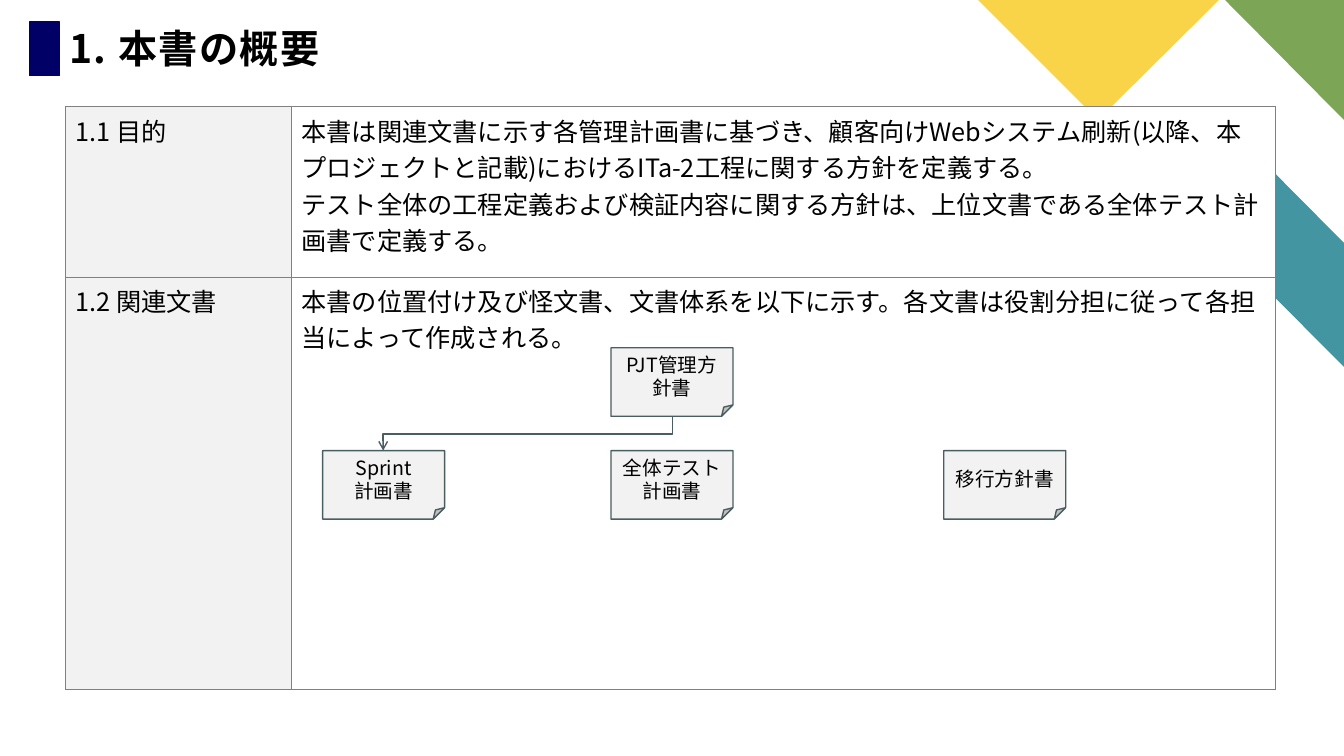
from dataclasses import dataclass

from lxml import etree
from pptx import Presentation
from pptx import util as u
from pptx.dml.color import RGBColor
from pptx.enum import shapes, text
from pptx.oxml import parse_xml
from pptx.oxml.ns import nsdecls, qn


@dataclass(frozen=True)
class Theme:
    """Colours, typeface and type sizes of the slide."""

    font: str = "Noto Sans CJK JP"
    ink: str = "000000"
    white: str = "FFFFFF"
    navy: str = "000066"
    teal: str = "4495A2"
    green: str = "7CA655"
    yellow: str = "F9D448"
    panel: str = "F2F2F2"
    outline: str = "4A5D60"
    border: str = "808080"
    title_size: int = 28
    body_size: int = 18
    document_size: int = 14


class SlideBuilder:
    """Draws styled elements on the current slide."""

    def __init__(self, slide, theme):
        self.slide = slide
        self.theme = theme

    def fill_text(self, frame, lines, size, align=None, bold=False):
        """Fill a text frame with one paragraph per line."""
        frame.word_wrap = True
        for index, line in enumerate(lines):
            paragraph = frame.add_paragraph() if index else frame.paragraphs[0]
            paragraph.text = line
            paragraph.alignment = align
            font = paragraph.font
            font.name = self.theme.font
            font.size = u.Pt(size)
            font.bold = bold
            font.color.rgb = RGBColor.from_string(self.theme.ink)
            properties = paragraph._p.pPr.find(qn("a:defRPr"))
            latin = properties.find(qn("a:latin"))
            latin.addnext(parse_xml(f'<a:ea {nsdecls("a")} typeface="{self.theme.font}"/>'))

    def paint(self, shape, fill, line=None):
        """Give a shape a flat fill and an optional outline."""
        shape.shadow.inherit = False
        shape.fill.solid()
        shape.fill.fore_color.rgb = RGBColor.from_string(fill)
        if line:
            shape.line.color.rgb = RGBColor.from_string(line)
            shape.line.width = u.Pt(1)
        else:
            shape.line.fill.background()

    def polygon(self, points, fill):
        """Draw a closed outline through points given in inches."""
        corners = [(u.Inches(x), u.Inches(y)) for x, y in points]
        builder = self.slide.shapes.build_freeform(*corners[0])
        builder.add_line_segments(corners[1:], close=True)
        self.paint(builder.convert_to_shape(), fill)

    def shape(self, kind, box, fill, line):
        """Draw a preset shape."""
        shape = self.slide.shapes.add_shape(kind, *map(u.Inches, box))
        self.paint(shape, fill, line)
        return shape

    def title(self, wording, box):
        """Place the slide title."""
        frame = self.slide.shapes.add_textbox(*map(u.Inches, box)).text_frame
        frame.margin_left = frame.margin_right = frame.margin_bottom = u.Inches(0.04)
        frame.margin_top = u.Inches(0.08)
        frame.vertical_anchor = text.MSO_ANCHOR.BOTTOM
        self.fill_text(frame, [wording], self.theme.title_size, bold=True)
        paragraph = frame.paragraphs[0]
        paragraph.line_spacing = 0.8
        paragraph.runs[0].font._element.set("spc", "100")

    def document(self, left, top, lines):
        """Draw a document with a folded corner."""
        shape = self.shape(shapes.MSO_SHAPE.FOLDED_CORNER, (left, top, 1.21, 0.68),
                           self.theme.panel, self.theme.outline)
        shape.text_frame.vertical_anchor = text.MSO_ANCHOR.MIDDLE
        self.fill_text(shape.text_frame, lines, self.theme.document_size, text.PP_ALIGN.CENTER)

    def elbow_arrow(self, start, end):
        """Draw an arrow that leaves downwards and turns left, then down."""
        centre_x, centre_y = (start[0] + end[0]) / 2, (start[1] + end[1]) / 2
        half_drop, half_run = (end[1] - start[1]) / 2, (start[0] - end[0]) / 2
        corners = (centre_x - half_drop, centre_y - half_run,
                   centre_x + half_drop, centre_y + half_run)
        connector = self.slide.shapes.add_connector(
            shapes.MSO_CONNECTOR.ELBOW, *map(u.Inches, corners))
        connector.line.color.rgb = RGBColor.from_string(self.theme.outline)
        connector.line.width = u.Pt(1)
        properties = connector._element.spPr
        properties.find(qn("a:xfrm")).set("rot", str(90 * 60000))
        etree.SubElement(properties.find(qn("a:ln")), qn("a:tailEnd"), type="arrow")
        etree.SubElement(properties, qn("a:effectLst"))

    def table(self, box, widths, heights, rows):
        """Draw a bordered table with a shaded heading column."""
        frame = self.slide.shapes.add_table(len(rows), len(widths), *map(u.Inches, box))
        table = frame.table
        table.first_row = table.horz_banding = False
        for column, width in zip(table.columns, widths):
            column.width = u.Inches(width)
        for row, height, contents in zip(table.rows, heights, rows):
            row.height = u.Inches(height)
            fills = (self.theme.panel, self.theme.white)
            for cell, lines, fill in zip(row.cells, contents, fills):
                self.fill_text(cell.text_frame, lines, self.theme.body_size)
                self.borders(cell)
                cell.fill.solid()
                cell.fill.fore_color.rgb = RGBColor.from_string(fill)

    def borders(self, cell):
        """Draw a thin line on all four sides of a cell."""
        properties = cell._tc.get_or_add_tcPr()
        for side in ("lnL", "lnR", "lnT", "lnB"):
            properties.append(parse_xml(
                f'<a:{side} {nsdecls("a")} w="12700"><a:solidFill>'
                f'<a:srgbClr val="{self.theme.border}"/></a:solidFill></a:{side}>'))


def main():
    """Build and save the overview slide."""
    presentation = Presentation()
    presentation.slide_width = u.Inches(13.33)
    presentation.slide_height = u.Inches(7.5)
    slide = presentation.slides.add_slide(presentation.slide_layouts[6])
    theme = Theme()
    builder = SlideBuilder(slide, theme)

    builder.polygon([(13.33, 3.64), (13.33, 2.41), (12.12, 1.19), (11.5, 1.8)], theme.teal)
    builder.polygon([(13.33, 1.19), (13.33, 0), (12.15, 0)], theme.green)
    builder.polygon([(9.7, 0), (10.89, 1.19), (12.09, 0)], theme.yellow)
    builder.shape(shapes.MSO_SHAPE.RECTANGLE, (0.29, 0.22, 0.3, 0.53), theme.navy, theme.navy)
    builder.title("1. 本書の概要", (0.65, 0.22, 12, 0.53))

    builder.table((0.65, 1.06, 12, 5.78), (2.24, 9.76), (1.69, 4.09), [
        (["1.1 目的"], [
            "本書は関連文書に示す各管理計画書に基づき、顧客向けWebシステム刷新"
            "(以降、本プロジェクトと記載)におけるITa-2工程に関する方針を定義する。",
            "テスト全体の工程定義および検証内容に関する方針は、"
            "上位文書である全体テスト計画書で定義する。"]),
        (["1.2 関連文書"], [
            "本書の位置付け及び怪文書、文書体系を以下に示す。"
            "各文書は役割分担に従って各担当によって作成される。"]),
    ])

    builder.document(6.06, 3.45, ["PJT管理方針書"])
    builder.elbow_arrow((6.67, 4.14), (3.8, 4.47))
    for left, lines in ((6.06, ["全体テスト計画書"]),
                        (3.2, ["Sprint", "計画書"]),
                        (9.36, ["移行方針書"])):
        builder.document(left, 4.47, lines)

    presentation.save("out.pptx")


if __name__ == "__main__":
    main()
